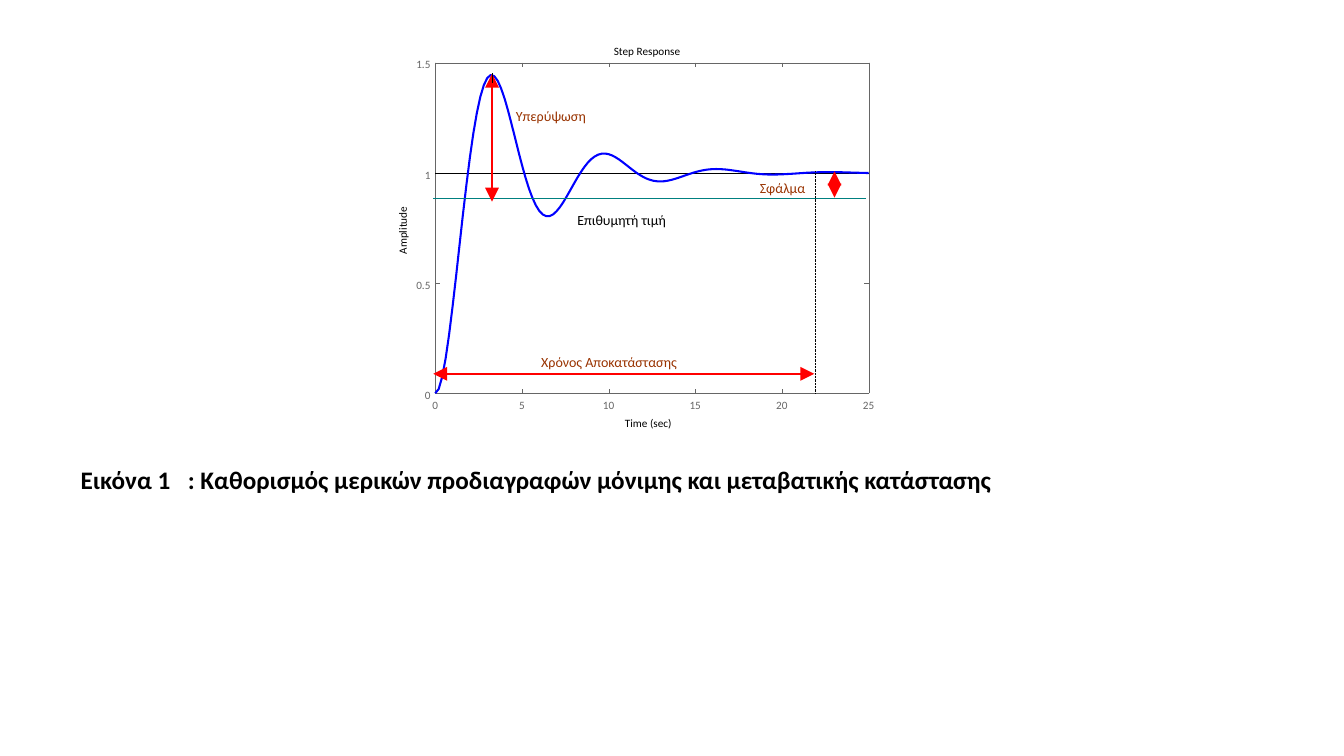
import math
from dataclasses import dataclass

from lxml import etree
from pptx import Presentation
from pptx import util as u
from pptx.dml.color import RGBColor
from pptx.enum import dml, shapes, text
from pptx.oxml.ns import qn

COLOURS = {
    "axis": "666666",
    "ink": "000000",
    "response": "0000FF",
    "target": "008080",
    "arrow": "FF0000",
    "note": "993300",
}
FONT = "Calibri"

# Plot frame in centimetres, and the data range it covers
LEFT, TOP, WIDTH, HEIGHT = 10.97, 1.58, 10.92, 8.33
RIGHT, BOTTOM = LEFT + WIDTH, TOP + HEIGHT
TIME_MAX, AMPLITUDE_MAX = 25, 1.5
TICK = 0.12
LABEL_HEIGHT = 0.43
DAMPING = 0.25
TIME_STEP = 0.2


@dataclass
class Line:
    x1: float
    y1: float
    x2: float
    y2: float
    colour: str = "axis"
    width: float = 0.14
    arrows: bool = False
    dotted: bool = False


@dataclass
class Label:
    wording: str
    left: float
    top: float
    width: float
    size: float = 8
    colour: str = "ink"
    align: text.PP_ALIGN = text.PP_ALIGN.LEFT
    rotation: float = 0


def rgb(name: str) -> RGBColor:
    return RGBColor.from_string(COLOURS[name])


def x_at(time: float) -> float:
    return LEFT + WIDTH * time / TIME_MAX


def y_at(amplitude: float) -> float:
    return BOTTOM - HEIGHT * amplitude / AMPLITUDE_MAX


def step_response(time: float) -> float:
    """Unit step response of a second-order system with natural frequency 1."""
    frequency = math.sqrt(1 - DAMPING**2)
    swing = math.cos(frequency * time) + DAMPING / frequency * math.sin(frequency * time)
    return 1 - math.exp(-DAMPING * time) * swing


def write(frame, wording: str, *, size: float, colour: str = "ink", bold: bool = False,
          align=text.PP_ALIGN.LEFT, spacing: float = 1.0, tab_stop: float = 0) -> None:
    paragraph = frame.paragraphs[0]
    paragraph.alignment = align
    paragraph.line_spacing = spacing
    if tab_stop:
        tabs = etree.SubElement(paragraph._p.get_or_add_pPr(), qn("a:tabLst"))
        etree.SubElement(tabs, qn("a:tab"), pos=str(u.Cm(tab_stop)), algn="l")
    run = paragraph.add_run()
    run.text = wording
    run.font.name = FONT
    run.font.size = u.Pt(size)
    run.font.bold = bold
    run.font.color.rgb = rgb(colour)


def draw_line(slide, line: Line) -> None:
    connector = slide.shapes.add_connector(
        shapes.MSO_CONNECTOR.STRAIGHT,
        u.Cm(line.x1), u.Cm(line.y1), u.Cm(line.x2), u.Cm(line.y2))
    connector.line.color.rgb = rgb(line.colour)
    connector.line.width = u.Pt(line.width)
    if line.dotted:
        connector.line.dash_style = dml.MSO_LINE.ROUND_DOT
    properties = connector._element.spPr
    if line.arrows:
        outline = properties.find(qn("a:ln"))
        for end in ("a:headEnd", "a:tailEnd"):
            etree.SubElement(outline, qn(end), type="triangle", w="lg", len="lg")
    etree.SubElement(properties, qn("a:effectLst"))


def draw_label(slide, label: Label) -> None:
    box = slide.shapes.add_textbox(
        u.Cm(label.left), u.Cm(label.top), u.Cm(label.width), u.Cm(LABEL_HEIGHT))
    box.rotation = label.rotation
    frame = box.text_frame
    frame.word_wrap = True
    frame.margin_left = frame.margin_right = frame.margin_top = frame.margin_bottom = 0
    write(frame, label.wording, size=label.size, colour=label.colour,
          align=label.align, spacing=1.07)


def draw_axes(slide) -> None:
    for y in (TOP, BOTTOM):
        draw_line(slide, Line(LEFT, y, RIGHT, y))
    for x in (LEFT, RIGHT):
        draw_line(slide, Line(x, TOP, x, BOTTOM))
    for time in range(0, TIME_MAX + 1, 5):
        x = x_at(time)
        draw_line(slide, Line(x, BOTTOM, x, BOTTOM - TICK))
        draw_line(slide, Line(x, TOP, x, TOP + TICK))
        draw_label(slide, Label(str(time), x - 0.5, 10.01, 1, colour="axis",
                                align=text.PP_ALIGN.CENTER))
    for amplitude in (0, 0.5, 1, 1.5):
        y = y_at(amplitude)
        draw_line(slide, Line(LEFT, y, LEFT + TICK, y))
        draw_line(slide, Line(RIGHT, y, RIGHT - TICK, y))
        draw_label(slide, Label(str(amplitude), LEFT - 1.12, y - 0.15, 1, colour="axis",
                                align=text.PP_ALIGN.RIGHT))


def draw_response(slide) -> None:
    times = [TIME_STEP * i for i in range(round(TIME_MAX / TIME_STEP) + 1)]
    points = [(u.Cm(x_at(time)), u.Cm(y_at(step_response(time)))) for time in times]
    builder = slide.shapes.build_freeform(*points[0])
    builder.add_line_segments(points[1:], close=False)
    curve = builder.convert_to_shape()
    curve.shadow.inherit = False
    curve.fill.background()
    curve.line.color.rgb = rgb("response")
    curve.line.width = u.Pt(1.46)


def draw_caption(slide) -> None:
    caption = slide.shapes.title
    caption.left, caption.top = u.Cm(1.78), u.Cm(11.58)
    caption.width, caption.height = u.Cm(30.33), u.Cm(2.57)
    frame = caption.text_frame
    frame.word_wrap = True
    frame.auto_size = text.MSO_AUTO_SIZE.NONE
    frame.vertical_anchor = text.MSO_ANCHOR.TOP
    write(frame, "Εικόνα 1\t: Καθορισμός μερικών προδιαγραφών μόνιμης και μεταβατικής κατάστασης",
          size=18, bold=True, tab_stop=2.7)


PEAK_X, TARGET_Y, SETTLING_X = 12.4, 5.0, 20.55
FINAL_Y = y_at(1)
FINAL_VALUE = Line(LEFT, FINAL_Y, RIGHT, FINAL_Y, "ink")
MARKS = [
    Line(10.92, TARGET_Y, 21.82, TARGET_Y, "target", 1.17),
    Line(21.03, 4.32, 21.03, 4.98, "arrow", 0.7, arrows=True),
    Line(PEAK_X, 1.86, PEAK_X, 5.08, "arrow", 1.17, arrows=True),
    Line(PEAK_X, 2.08, PEAK_X, 1.83, "ink", 0.7),
    Line(SETTLING_X, 4.32, SETTLING_X, BOTTOM, "ink", 0.5, dotted=True),
    Line(10.92, 9.42, 20.52, 9.42, "arrow", 1.17, arrows=True),
]
LABELS = [
    Label("Step Response", 15.47, 1.09, 2.54),
    Label("Time (sec)", 15.75, 10.46, 1.75),
    Label("Amplitude", 9.35, 5.38, 1.63, rotation=270),
    Label("Επιθυμητή τιμή", 14.55, 5.31, 2.97, 10),
    Label("Σφάλμα", 19.15, 4.5, 1.6, 10, "note"),
    Label("Υπερύψωση", 13.0, 2.69, 2.57, 10, "note"),
    Label("Χρόνος Αποκατάστασης", 13.64, 8.89, 4.98, 10, "note"),
]


def main() -> None:
    presentation = Presentation()
    presentation.slide_width, presentation.slide_height = u.Cm(33.87), u.Cm(19.05)
    slide = presentation.slides.add_slide(presentation.slide_layouts[5])
    draw_axes(slide)
    draw_line(slide, FINAL_VALUE)
    draw_response(slide)
    for mark in MARKS:
        draw_line(slide, mark)
    for label in LABELS:
        draw_label(slide, label)
    draw_caption(slide)
    presentation.save("out.pptx")


if __name__ == "__main__":
    main()
